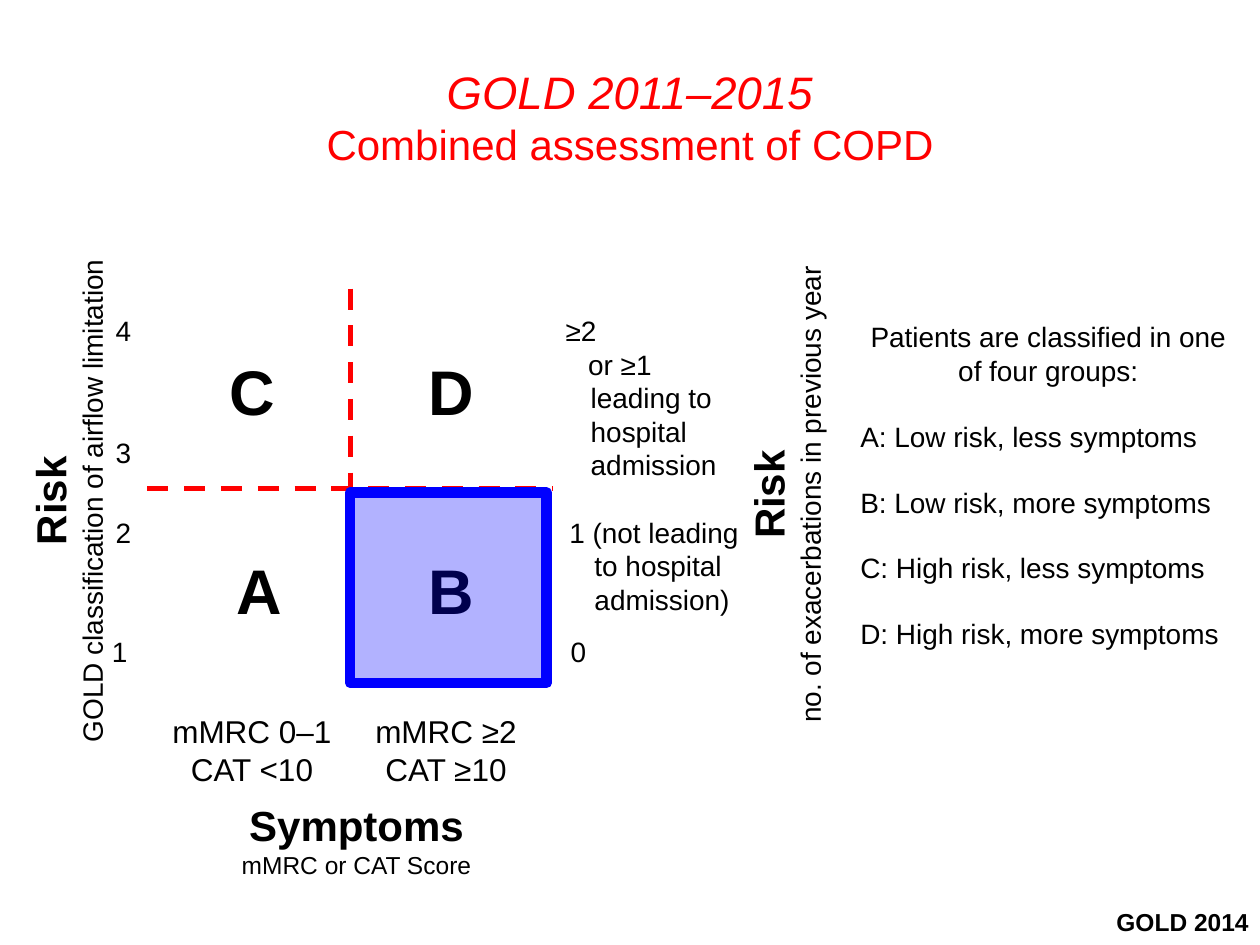
from dataclasses import dataclass

from lxml import etree
from pptx import Presentation
from pptx import util as u
from pptx.dml.color import RGBColor
from pptx.enum import dml, shapes, text
from pptx.oxml.ns import qn

EMU_PER_PX = 9144
FONT = "Arial"
COLORS = {"ink": "000000", "paper": "FFFFFF", "accent": "FF0000", "highlight": "0000FF"}
LEFT, CENTER, RIGHT = text.PP_ALIGN.LEFT, text.PP_ALIGN.CENTER, text.PP_ALIGN.RIGHT
TOP, MIDDLE = text.MSO_ANCHOR.TOP, text.MSO_ANCHOR.MIDDLE


@dataclass(frozen=True)
class Line:
    text: str
    size: int = 16
    bold: bool = False
    italic: bool = False
    color: str = "ink"
    align: text.PP_ALIGN = LEFT
    margin: int = 0
    indent: int = 0
    before: float = 0


@dataclass(frozen=True)
class Label:
    box: tuple[int, int, int, int]
    lines: tuple[Line, ...]
    wrap: bool = False
    grow: bool = True
    anchor: text.MSO_ANCHOR = TOP
    rotation: int = 0


@dataclass(frozen=True)
class Panel:
    box: tuple[int, int, int, int]
    line: str
    width: float
    fill: str | None = None
    opacity: int = 100


def px(value: int) -> u.Emu:
    return u.Emu(value * EMU_PER_PX)


def rgb(name: str) -> RGBColor:
    return RGBColor.from_string(COLORS[name])


def write_lines(shape, label: Label) -> None:
    frame = shape.text_frame
    frame.word_wrap = label.wrap
    frame.vertical_anchor = label.anchor
    if label.grow:
        frame.auto_size = text.MSO_AUTO_SIZE.SHAPE_TO_FIT_TEXT
    for index, line in enumerate(label.lines):
        paragraph = frame.add_paragraph() if index else frame.paragraphs[0]
        paragraph.text = line.text
        paragraph.alignment = line.align
        paragraph.space_before = u.Pt(line.before)
        font = paragraph.font
        font.name, font.size = FONT, u.Pt(line.size)
        font.bold, font.italic = line.bold, line.italic
        font.color.rgb = rgb(line.color)
        if line.margin:
            properties = paragraph._p.get_or_add_pPr()
            properties.set("marL", str(px(line.margin)))
            properties.set("indent", str(px(line.indent)))


def draw_label(slide, label: Label) -> None:
    shape = slide.shapes.add_textbox(*map(px, label.box))
    shape.rotation = label.rotation
    write_lines(shape, label)


def draw_panel(slide, panel: Panel):
    shape = slide.shapes.add_shape(shapes.MSO_SHAPE.RECTANGLE, *map(px, panel.box))
    shape.shadow.inherit = False
    shape.line.color.rgb = rgb(panel.line)
    shape.line.width = u.Pt(panel.width)
    if panel.fill is None:
        shape.fill.background()
        return shape
    shape.fill.solid()
    shape.fill.fore_color.rgb = rgb(panel.fill)
    color = shape.element.spPr.find(f"{qn('a:solidFill')}/{qn('a:srgbClr')}")
    etree.SubElement(color, qn("a:alpha"), val=str(panel.opacity * 1000))
    return shape


def draw_divider(slide, ends: tuple[int, int, int, int]) -> None:
    connector = slide.shapes.add_connector(shapes.MSO_CONNECTOR.STRAIGHT, *map(px, ends))
    connector.line.color.rgb = rgb("accent")
    connector.line.width = u.Pt(3)
    connector.line.dash_style = dml.MSO_LINE.DASH
    etree.SubElement(connector.element.spPr, qn("a:effectLst"))


def heading(main: str, detail: str, detail_size: int) -> tuple[Line, ...]:
    return (Line(main, 24, bold=True, align=CENTER), Line(detail, detail_size, align=CENTER))


TITLE = Label(
    (50, 30, 900, 125),
    (
        Line("GOLD 2011–2015", 26, italic=True, color="accent", align=CENTER),
        Line("Combined assessment of COPD", 24, color="accent", align=CENTER),
    ),
    wrap=True, grow=False, anchor=MIDDLE,
)
MATRIX = Panel((117, 229, 321, 318), "paper", 2)
DIVIDERS = [(278, 229, 278, 548), (117, 388, 439, 388)]
GROUPS = [
    Label((left, top, width, 71), (Line(letter, 36, bold=True, align=CENTER),))
    for letter, left, top, width in [
        ("C", 172, 275, 57), ("D", 330, 275, 57), ("A", 171, 433, 69), ("B", 330, 433, 57)
    ]
]
TICKS = [
    Label((left, top, 33, 37), (Line(digit),))
    for digit, left, top in [
        ("0", 443, 499), ("4", 82, 244), ("3", 82, 341), ("2", 82, 404), ("1", 79, 499)
    ]
]
SCORES = [
    Label((left, 560, width, 71), tuple(Line(score, 18, align=CENTER) for score in scores))
    for left, width, scores in [
        (126, 148, ("mMRC 0‒1", "CAT <10")), (287, 134, ("mMRC ≥2", "CAT ≥10"))
    ]
]
AXES = [
    Label((181, 630, 204, 74), heading("Symptoms", "mMRC or CAT Score", 14)),
    Label((-151, 359, 408, 77),
          heading("Risk", "GOLD classification of airflow limitation", 16), rotation=270),
    Label((420, 354, 406, 77),
          heading("Risk", "no. of exacerbations in previous year", 16),
          wrap=True, rotation=270),
]
EXACERBATIONS = [
    Label((442, 404, 160, 118),
          (Line("1 (not leading to hospital admission)", margin=20, indent=-20),), wrap=True),
    Label((439, 244, 146, 145),
          (Line("≥2"), Line("or ≥1 leading to hospital admission", margin=20, indent=-2)),
          wrap=True),
]
LEGEND_PANEL = Panel((673, 249, 318, 279), "paper", 0.75)
LEGEND = Label(
    LEGEND_PANEL.box,
    (
        Line("Patients are classified in one of four groups:", align=CENTER),
        *(
            Line(group, margin=39, indent=-39, before=18.4)
            for group in (
                "A: Low risk, less symptoms",
                "B: Low risk, more symptoms",
                "C: High risk, less symptoms",
                "D: High risk, more symptoms",
            )
        ),
    ),
    wrap=True,
)
HIGHLIGHT = Panel((278, 391, 156, 151), "highlight", 6, "highlight", 30)
CREDIT = Label((494, 714, 507, 35), (Line("GOLD 2014", 14, bold=True, align=RIGHT),),
               grow=False, anchor=MIDDLE)


def main() -> None:
    presentation = Presentation()
    presentation.slide_width, presentation.slide_height = px(1000), px(750)
    slide = presentation.slides.add_slide(presentation.slide_layouts[6])

    draw_label(slide, TITLE)
    draw_panel(slide, MATRIX)
    for ends in DIVIDERS:
        draw_divider(slide, ends)
    for label in GROUPS:
        draw_label(slide, label)
    write_lines(draw_panel(slide, LEGEND_PANEL), LEGEND)
    for label in TICKS + SCORES + AXES:
        draw_label(slide, label)
    draw_panel(slide, HIGHLIGHT)
    for label in [CREDIT] + EXACERBATIONS:
        draw_label(slide, label)

    presentation.save("out.pptx")


if __name__ == "__main__":
    main()
